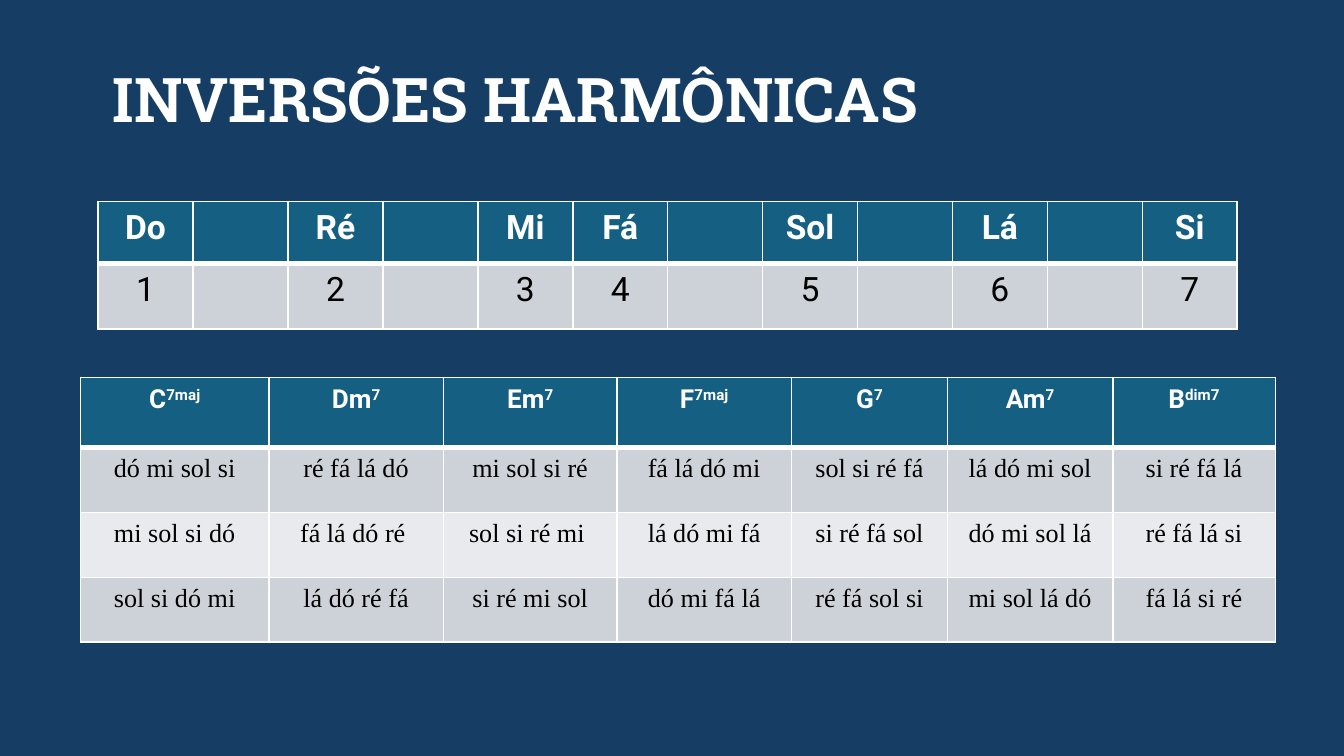
from lxml.etree import fromstring
from pptx import Presentation
from pptx.dml.color import RGBColor
from pptx.enum.text import MSO_ANCHOR, MSO_AUTO_SIZE, PP_ALIGN
from pptx.util import Inches, Pt

HUES = {"back": "163E64", "head": "156082", "dark": "CCD2D8",
        "pale": "E8EAED", "white": "FFFFFF", "black": "000000"}
NS = "http://schemas.openxmlformats.org/drawingml/2006/main"


def write(para, text, face, size, hue, bold=False, rise=0):
    """Add one run; rise lifts it as a superscript, in percent."""
    run = para.add_run()
    run.text = text
    font = run.font
    font.name, font.size, font.bold = face, Pt(size), bold
    font.color.rgb = RGBColor.from_string(HUES[hue])
    if rise:
        font._element.set("baseline", str(rise * 1000))


def grid(left, top, cols, rows):
    """Add a table with a header row, banded body and white borders."""
    frame = slide.shapes.add_table(
        len(rows), len(cols), Inches(left), Inches(top),
        Inches(sum(cols)), Inches(sum(rows)))
    table = frame.table
    for col, width in zip(table.columns, cols):
        col.width = Inches(width)
    for r, (row, height) in enumerate(zip(table.rows, rows)):
        row.height = Inches(height)
        hue = "head" if r == 0 else ("pale", "dark")[r % 2]
        for cell in row.cells:
            cell.fill.solid()
            cell.fill.fore_color.rgb = RGBColor.from_string(HUES[hue])
            cell.text_frame.paragraphs[0].alignment = PP_ALIGN.CENTER
            props = cell._tc.get_or_add_tcPr()
            for i, side in enumerate("LRTB"):
                width = Pt(3 if r == 0 and side == "B" else 1)
                props.insert(i, fromstring(
                    f'<a:ln{side} xmlns:a="{NS}" w="{width}"><a:solidFill>'
                    f'<a:srgbClr val="{HUES["white"]}"/>'
                    f'</a:solidFill></a:ln{side}>'))
    return table


deck = Presentation()
deck.slide_width, deck.slide_height = Inches(10), Inches(10 * 9 / 16)
slide = deck.slides.add_slide(deck.slide_layouts[5])
slide.background.fill.solid()
slide.background.fill.fore_color.rgb = RGBColor.from_string(HUES["back"])

# Title
title = slide.shapes.title
title.left, title.top = Inches(0.74), Inches(0.22)
title.width, title.height = Inches(8.62), Inches(1.09)
frame = title.text_frame
frame.auto_size = MSO_AUTO_SIZE.NONE
frame.word_wrap = True
frame.vertical_anchor = MSO_ANCHOR.MIDDLE
para = frame.paragraphs[0]
para.alignment, para.line_spacing = PP_ALIGN.LEFT, 0.9
write(para, "INVERSÕES HARMÔNICAS", "Roboto Slab", 33, "white", True)

# Scale: the twelve semitones, with the seven degrees numbered
notes = {0: "Do", 2: "Ré", 4: "Mi", 5: "Fá", 7: "Sol", 9: "Lá", 11: "Si"}
scale = grid(0.73, 1.5, [8.48 / 12] * 12, [0.46, 0.49])
for step, (col, note) in enumerate(notes.items(), 1):
    para = scale.cell(0, col).text_frame.paragraphs[0]
    write(para, note, "Roboto", 18, "white", True)
    para = scale.cell(1, col).text_frame.paragraphs[0]
    write(para, str(step), "Roboto", 18, "black")

# Chords: each row moves the lowest note to the end
chords = [
    ("C", "7maj", "dó mi sol si"),
    ("Dm", "7", "ré fá lá dó"),
    ("Em", "7", "mi sol si ré"),
    ("F", "7maj", "fá lá dó mi"),
    ("G", "7", "sol si ré fá"),
    ("Am", "7", "lá dó mi sol"),
    ("B", "dim7", "si ré fá lá"),
]
table = grid(0.6, 2.81, [1.4, 1.3, 1.29, 1.3, 1.16, 1.23, 1.21],
             [0.52] + [1.45 / 3] * 3)
for col, (root, kind, tones) in enumerate(chords):
    para = table.cell(0, col).text_frame.paragraphs[0]
    write(para, root, "Roboto", 14, "white", True)
    write(para, kind, "Roboto", 14, "white", True, 30)
    tones = tones.split()
    for turn in range(3):
        para = table.cell(turn + 1, col).text_frame.paragraphs[0]
        tail = " " if turn == 1 and root in ("Dm", "Em") else ""
        write(para, " ".join(tones[turn:] + tones[:turn]) + tail,
              "Times New Roman", 14, "black")

deck.save("out.pptx")
